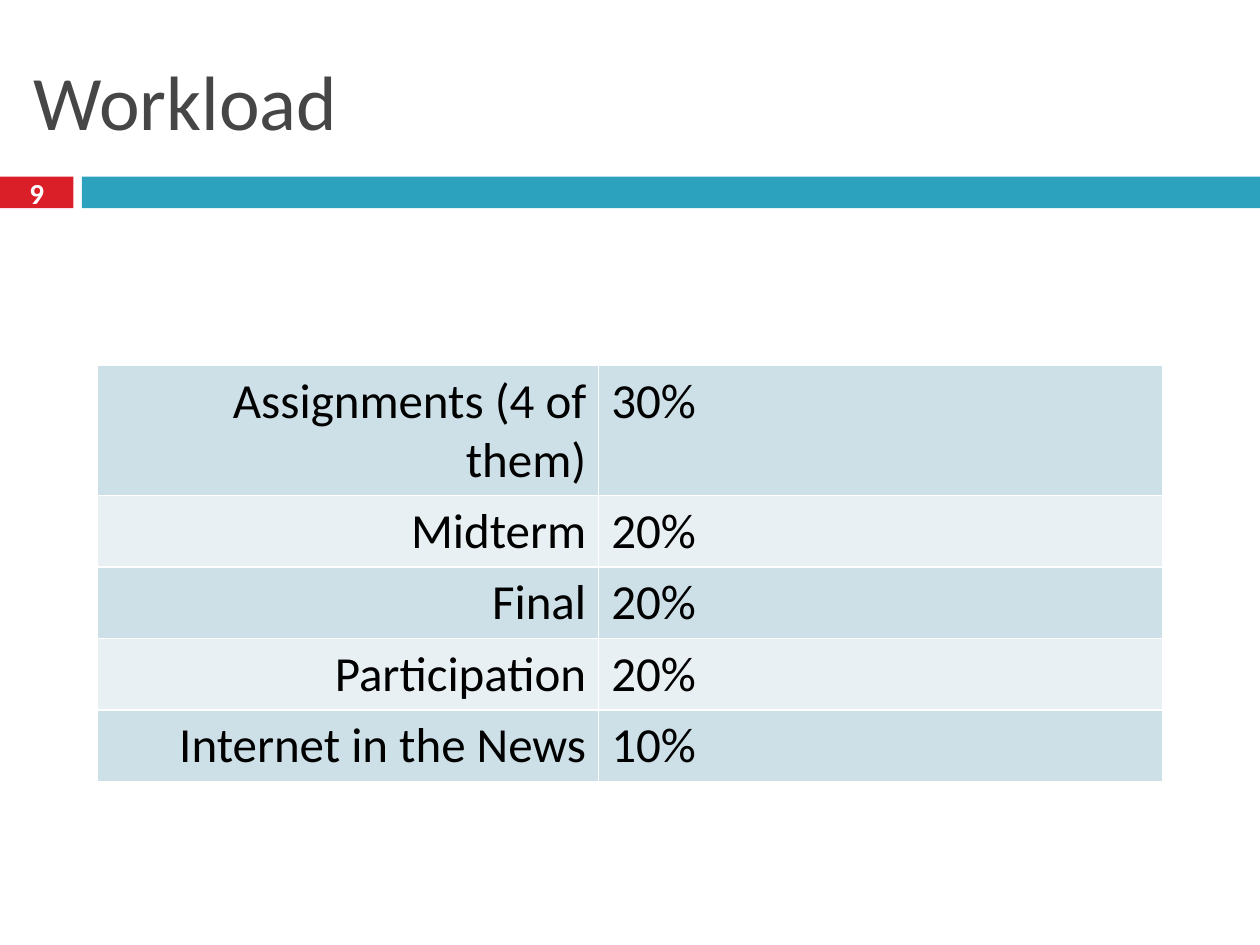
from lxml import etree
from pptx import Presentation
from pptx.dml.color import RGBColor
from pptx.enum.shapes import MSO_SHAPE
from pptx.enum.text import MSO_ANCHOR, PP_ALIGN
from pptx.oxml.ns import qn
from pptx.util import Cm, Pt

FONT = "Calibri"
WHITE = RGBColor(0xFF, 0xFF, 0xFF)
BLACK = RGBColor(0x00, 0x00, 0x00)
TITLE_GRAY = RGBColor(0x46, 0x46, 0x46)
RED = RGBColor(0xDA, 0x1F, 0x28)
TEAL = RGBColor(0x2D, 0xA2, 0xBF)
ROW_FILLS = (RGBColor(0xCD, 0xE0, 0xE8), RGBColor(0xE8, 0xF0, 0xF4))

WORKLOAD = (
    ("Assignments (4 of them)", "30%"),
    ("Midterm", "20%"),
    ("Final", "20%"),
    ("Participation", "20%"),
    ("Internet in the News", "10%"),
)


def write(frame, text, size, color, align=PP_ALIGN.LEFT, bold=False):
    frame.text = text
    paragraph = frame.paragraphs[0]
    paragraph.alignment = align
    font = paragraph.runs[0].font
    font.name, font.size, font.bold = FONT, Pt(size), bold
    font.color.rgb = color


def add_title(slide, left, top, width, height):
    title = slide.shapes.title
    title.left, title.top, title.width, title.height = left, top, width, height
    title.text_frame.vertical_anchor = MSO_ANCHOR.MIDDLE
    write(title.text_frame, "Workload", 44, TITLE_GRAY)


def add_bar(slide, left, top, width, height, color):
    bar = slide.shapes.add_shape(MSO_SHAPE.RECTANGLE, left, top, width, height)
    bar.shadow.inherit = False
    bar.fill.solid()
    bar.fill.fore_color.rgb = color
    bar.line.fill.background()


def add_number_band(slide, left, top, width, height):
    """Red page number block, a gap, and a teal bar to the right edge."""
    number_width, gap, overhang = Cm(1.48), Cm(0.17), Cm(0.09)
    bar_offset = number_width + gap
    add_bar(slide, left, top, number_width, height, RED)
    add_bar(slide, left + bar_offset, top, width - bar_offset, height, TEAL)

    number = slide.shapes.add_textbox(
        left, top - overhang, number_width, height + 2 * overhang
    )
    frame = number.text_frame
    frame.word_wrap = True
    frame.vertical_anchor = MSO_ANCHOR.MIDDLE
    write(frame, "9", 16.6, WHITE, PP_ALIGN.CENTER, bold=True)


def add_borders(cell, color, width):
    properties = cell._tc.get_or_add_tcPr()
    for index, side in enumerate(("lnL", "lnR", "lnT", "lnB")):
        line = etree.Element(qn(f"a:{side}"), w=str(width))
        fill = etree.SubElement(line, qn("a:solidFill"))
        etree.SubElement(fill, qn("a:srgbClr"), val=str(color))
        properties.insert(index, line)


def add_workload_table(slide, left, top, width, height):
    table = slide.shapes.add_table(
        len(WORKLOAD), 2, left, top, width, height
    ).table
    table.first_row = False
    label_width = Cm(10.1)
    table.columns[0].width = label_width
    table.columns[1].width = width - label_width

    for row, entry in enumerate(WORKLOAD):
        for column, text in enumerate(entry):
            cell = table.cell(row, column)
            cell.fill.solid()
            cell.fill.fore_color.rgb = ROW_FILLS[row % 2]
            align = PP_ALIGN.LEFT if column else PP_ALIGN.RIGHT
            write(cell.text_frame, text, 28, BLACK, align)
            add_borders(cell, WHITE, Pt(1))


def main():
    deck = Presentation()
    deck.slide_width, deck.slide_height = Cm(25.4), Cm(19.05)
    slide = deck.slides.add_slide(deck.slide_layouts[5])
    slide.background.fill.solid()
    slide.background.fill.fore_color.rgb = WHITE

    add_number_band(slide, 0, Cm(3.56), deck.slide_width, Cm(0.64))
    add_title(slide, Cm(0.43), Cm(0.64), Cm(24.56), Cm(2.74))
    add_workload_table(slide, Cm(1.97), Cm(7.36), Cm(21.47), Cm(5.2))
    deck.save("out.pptx")


if __name__ == "__main__":
    main()
